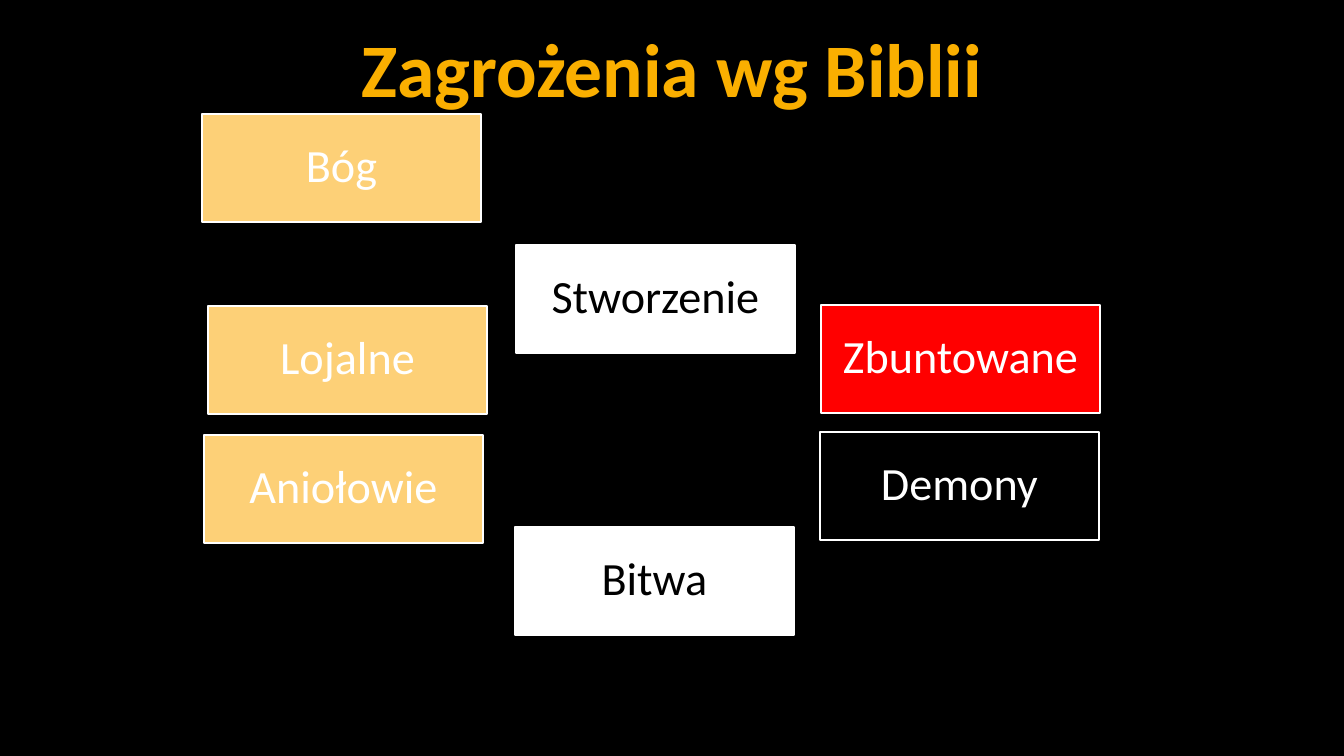
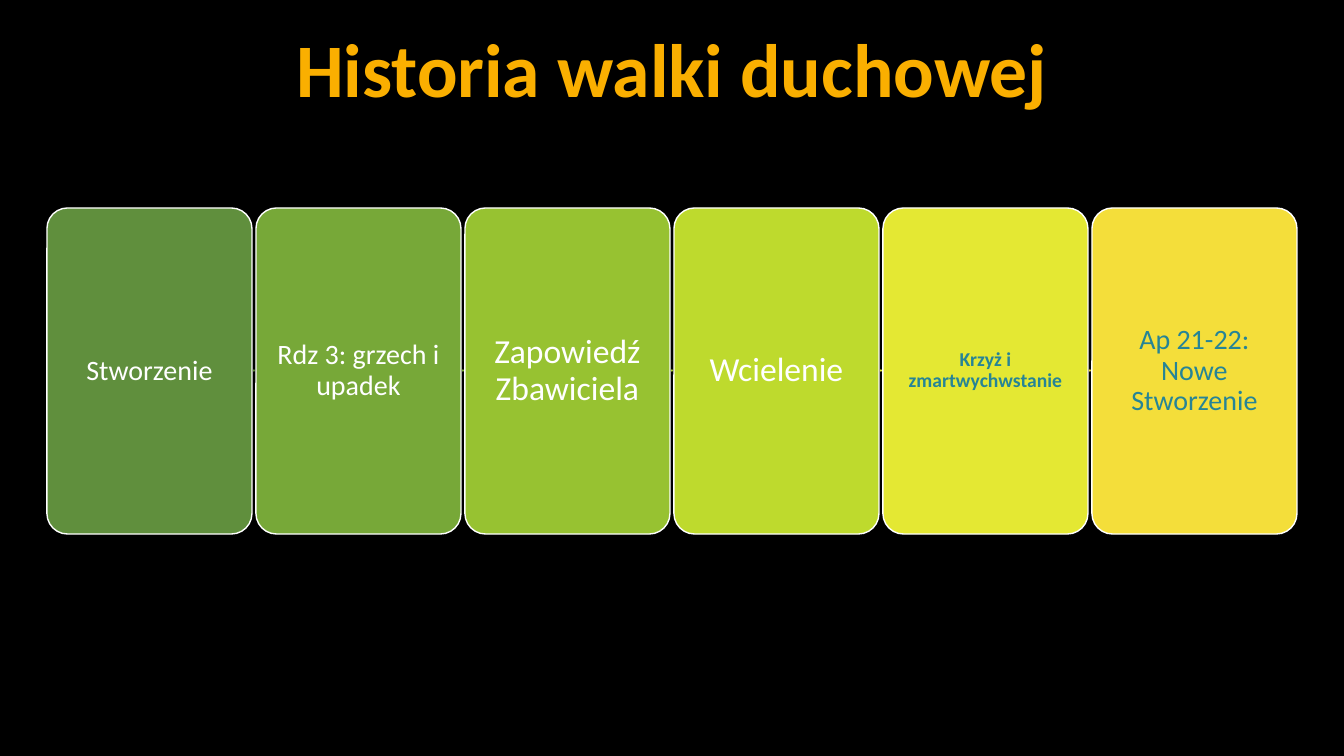
from dataclasses import dataclass

from pptx import Presentation
from pptx.dml.color import RGBColor
from pptx.enum.shapes import MSO_SHAPE
from pptx.enum.text import MSO_ANCHOR, PP_ALIGN
from pptx.shapes.autoshape import Shape
from pptx.slide import Slide
from pptx.util import Emu, Pt

RECT, ROUNDED, ARROW = MSO_SHAPE.RECTANGLE, MSO_SHAPE.ROUNDED_RECTANGLE, MSO_SHAPE.RIGHT_ARROW
MIDDLE, CENTER = MSO_ANCHOR.MIDDLE, PP_ALIGN.CENTER
SLIDE_W, SLIDE_H = 1344, 756


@dataclass(frozen=True)
class Theme:
    font: str = "Calibri"
    background: str = "000000"
    title: str = "FAAF00"
    light: str = "FFFFFF"
    dark: str = "000000"
    good: str = "FDD077"
    evil: str = "FF0000"
    teal: str = "268496"
    title_size: int = 54
    box_size: int = 33
    large: int = 24
    medium: int = 20
    small: int = 14
    line_spacing: float = 0.9


THEME = Theme()


@dataclass(frozen=True)
class Box:
    text: str
    x: int
    y: int
    fill: str
    color: str = THEME.light


@dataclass(frozen=True)
class Stage:
    text: str
    fill: str
    arrow: str = ""  # fill of the arrow to the next stage
    size: int = THEME.medium
    color: str = THEME.light
    bold: bool = False


BOX_W, BOX_H, BOX_INSET = 279, 108, 14
BOXES = [
    Box("Bóg", 202, 114, THEME.good),
    Box("Stworzenie", 516, 245, THEME.light, THEME.dark),
    Box("Lojalne", 208, 306, THEME.good),
    Box("Zbuntowane", 821, 305, THEME.evil),
    Box("Aniołowie", 204, 435, THEME.good),
    Box("Demony", 820, 432, THEME.dark),
    Box("Bitwa", 515, 527, THEME.light, THEME.dark),
]

STAGE_X, STAGE_Y, STAGE_W, STAGE_H, STAGE_GAP = 47, 208, 205, 326, 4
ARROW_W, ARROW_H = 2, 3
STAGES = [
    Stage("Stworzenie", "608F3D", "608F3D"),
    Stage("Rdz 3: grzech i upadek", "77A838", "7EAE36"),
    Stage("Zapowiedź Zbawiciela", "97C231", "ABD02D", THEME.large),
    Stage("Wcielenie", "BEDA2D", "DBE431", THEME.large),
    Stage("Krzyż i zmartwychwstanie", "E4E833", "F4DE3A", THEME.small, THEME.teal, True),
    Stage("Ap 21-22: Nowe Stworzenie", "F4DE3A", color=THEME.teal),
]


def px(n: int) -> Emu:
    return Emu(round(n * 914400 / 100.8))


def rgb(color: str) -> RGBColor:
    return RGBColor.from_string(color)


def write(s: Shape, text: str, *, size: int, color: str, bold: bool = False,
          inset: int = 10) -> None:
    """Fill a shape with one centred paragraph."""
    tf = s.text_frame
    tf.word_wrap = True
    tf.vertical_anchor = MIDDLE
    tf.margin_left = tf.margin_right = tf.margin_top = tf.margin_bottom = px(inset)
    p = tf.paragraphs[0]
    p.alignment = CENTER
    p.line_spacing = THEME.line_spacing
    r = p.add_run()
    r.text = text
    r.font.name, r.font.size, r.font.bold = THEME.font, Pt(size), bold
    r.font.color.rgb = rgb(color)


def add_block(slide: Slide, kind: MSO_SHAPE, x: int, y: int, w: int, h: int, fill: str,
              outlined: bool = True) -> Shape:
    s = slide.shapes.add_shape(kind, px(x), px(y), px(w), px(h))
    s.shadow.inherit = False
    s.fill.solid()
    s.fill.fore_color.rgb = rgb(fill)
    if outlined:
        s.line.color.rgb = rgb(THEME.light)
        s.line.width = Pt(1)
    else:
        s.line.fill.background()
    return s


def add_slide(prs: Presentation, title: str) -> Slide:
    """Black slide with the shared title style."""
    slide = prs.slides.add_slide(prs.slide_layouts[6])
    slide.background.fill.solid()
    slide.background.fill.fore_color.rgb = rgb(THEME.background)
    s = slide.shapes.add_textbox(px(92), px(0), px(1160), px(146))
    write(s, title, size=THEME.title_size, color=THEME.title, bold=True)
    return slide


def add_threats(prs: Presentation) -> None:
    slide = add_slide(prs, "Zagrożenia wg Biblii")
    for box in BOXES:
        s = add_block(slide, RECT, box.x, box.y, BOX_W, BOX_H, box.fill)
        write(s, box.text, size=THEME.box_size, color=box.color, inset=BOX_INSET)


def add_history(prs: Presentation) -> None:
    slide = add_slide(prs, "Historia walki duchowej")
    for i, stage in enumerate(STAGES):
        x = STAGE_X + i * (STAGE_W + STAGE_GAP)
        s = add_block(slide, ROUNDED, x, STAGE_Y, STAGE_W, STAGE_H, stage.fill)
        s.adjustments[0] = 0.1
        write(s, stage.text, size=stage.size, color=stage.color, bold=stage.bold,
              inset=round(stage.size * 0.4))
        # Small arrow centred in the gap
        if stage.arrow:
            arrow = add_block(slide, ARROW, x + STAGE_W + (STAGE_GAP - ARROW_W) // 2,
                              STAGE_Y + (STAGE_H - ARROW_H) // 2, ARROW_W, ARROW_H,
                              stage.arrow, outlined=False)
            arrow.adjustments[0] = 0.6


def main() -> None:
    prs = Presentation()
    prs.slide_width, prs.slide_height = px(SLIDE_W), px(SLIDE_H)
    add_threats(prs)
    add_history(prs)
    prs.save("out.pptx")


if __name__ == "__main__":
    main()
